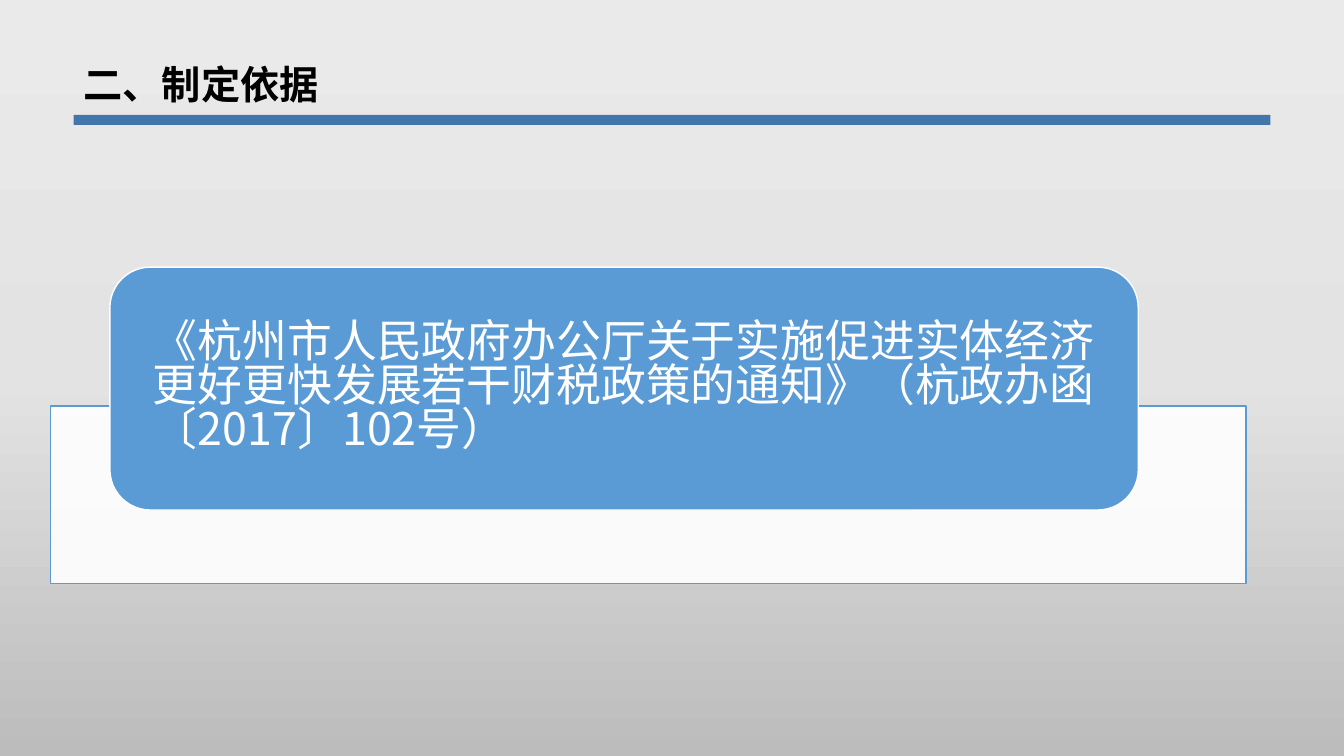
"""Builds the slide that names the policy basis of the document."""
from copy import deepcopy
from dataclasses import dataclass

from lxml.etree import SubElement
from pptx import Presentation
from pptx.dml.color import RGBColor
from pptx.enum.shapes import MSO_SHAPE
from pptx.enum.text import MSO_ANCHOR, PP_ALIGN
from pptx.oxml.ns import qn
from pptx.util import Inches, Pt

TITLE = "二、制定依据"
BASIS = ("《杭州市人民政府办公厅关于实施促进实体经济更好更快发展若干财税政策的通知》"
         "（杭政办函〔2017〕102号）")

WIDTH, HEIGHT = 13.33, 7.5
MARGIN, CONTENT_WIDTH = 0.73, 11.87
RULE_TOP, RULE_HEIGHT = 1.14, 0.1
PANEL = (0.5, 4.03, 11.86, 1.76)
CARD = (1.09, 2.65, 10.2, 2.41)


@dataclass(frozen=True)
class Theme:
    background: tuple = ((0, "EBEAEA"), (0.5, "E4E3E3"), (1, "BDBCBC"))
    rule: str = "4276AA"
    accent: str = "5B9BD5"
    white: str = "FFFFFF"
    black: str = "000000"
    latin: str = "Arial"
    chinese: str = "Noto Sans CJK SC"
    title_size: int = 28
    body_size: int = 32


THEME = Theme()


def paint_background(slide):
    fill = slide.background.fill
    fill.gradient()
    fill.gradient_angle = 270
    stops = slide.element.find(".//" + qn("a:gsLst"))
    stops.append(deepcopy(stops[-1]))
    for stop, (position, color) in zip(fill.gradient_stops, THEME.background):
        stop.position = position
        stop.color.rgb = RGBColor.from_string(color)


def add_block(slide, kind, bounds, fill, line=None, opacity=None):
    block = slide.shapes.add_shape(kind, *map(Inches, bounds))
    block.shadow.inherit = False
    block.fill.solid()
    block.fill.fore_color.rgb = RGBColor.from_string(fill)
    if opacity is not None:
        color = block.fill._xPr.find(".//" + qn("a:srgbClr"))
        SubElement(color, qn("a:alpha")).set("val", str(opacity * 1000))
    if line:
        block.line.color.rgb = RGBColor.from_string(line)
        block.line.width = Pt(1)
    else:
        block.line.fill.background()
    return block


def write(shape, text, *, size, color, font, anchor, spacing, bold=False, inset=(0.1, 0.05)):
    frame = shape.text_frame
    frame.word_wrap = True
    frame.vertical_anchor = anchor
    frame.margin_left = frame.margin_right = Inches(inset[0])
    frame.margin_top = frame.margin_bottom = Inches(inset[1])
    para = frame.paragraphs[0]
    para.alignment = PP_ALIGN.LEFT
    para.line_spacing = spacing
    span = para.add_run()
    span.text = text
    span.font.size = Pt(size)
    span.font.bold = bold
    span.font.color.rgb = RGBColor.from_string(color)
    span.font.name = font
    SubElement(span.font._element, qn("a:ea")).set("typeface", THEME.chinese)


def main():
    deck = Presentation()
    deck.slide_width, deck.slide_height = Inches(WIDTH), Inches(HEIGHT)
    slide = deck.slides.add_slide(deck.slide_layouts[5])
    paint_background(slide)

    title = slide.shapes.title
    title.left, title.top = Inches(MARGIN), Inches(0)
    title.width, title.height = Inches(CONTENT_WIDTH), Inches(1.12)
    write(title, TITLE, size=THEME.title_size, color=THEME.black, font=THEME.latin,
          anchor=MSO_ANCHOR.BOTTOM, spacing=0.9, bold=True)

    add_block(slide, MSO_SHAPE.RECTANGLE,
              (MARGIN, RULE_TOP, CONTENT_WIDTH, RULE_HEIGHT), THEME.rule)
    add_block(slide, MSO_SHAPE.RECTANGLE, PANEL, THEME.white, line=THEME.accent, opacity=90)
    card = add_block(slide, MSO_SHAPE.ROUNDED_RECTANGLE, CARD, THEME.accent, line=THEME.white)
    write(card, BASIS, size=THEME.body_size, color=THEME.white, font=THEME.chinese,
          anchor=MSO_ANCHOR.MIDDLE, spacing=0.82, inset=(0.31, 0))

    deck.save("out.pptx")


if __name__ == "__main__":
    main()
